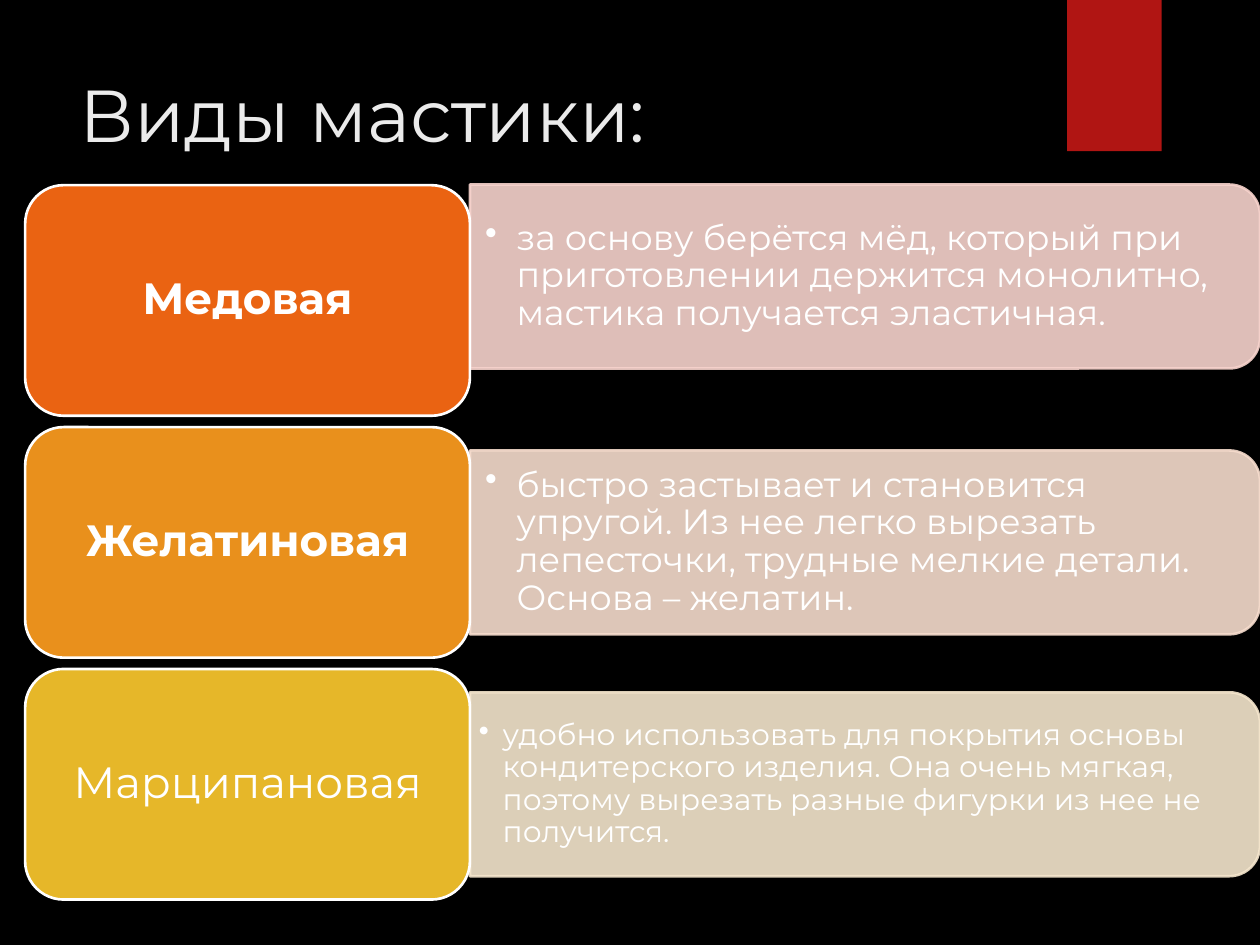
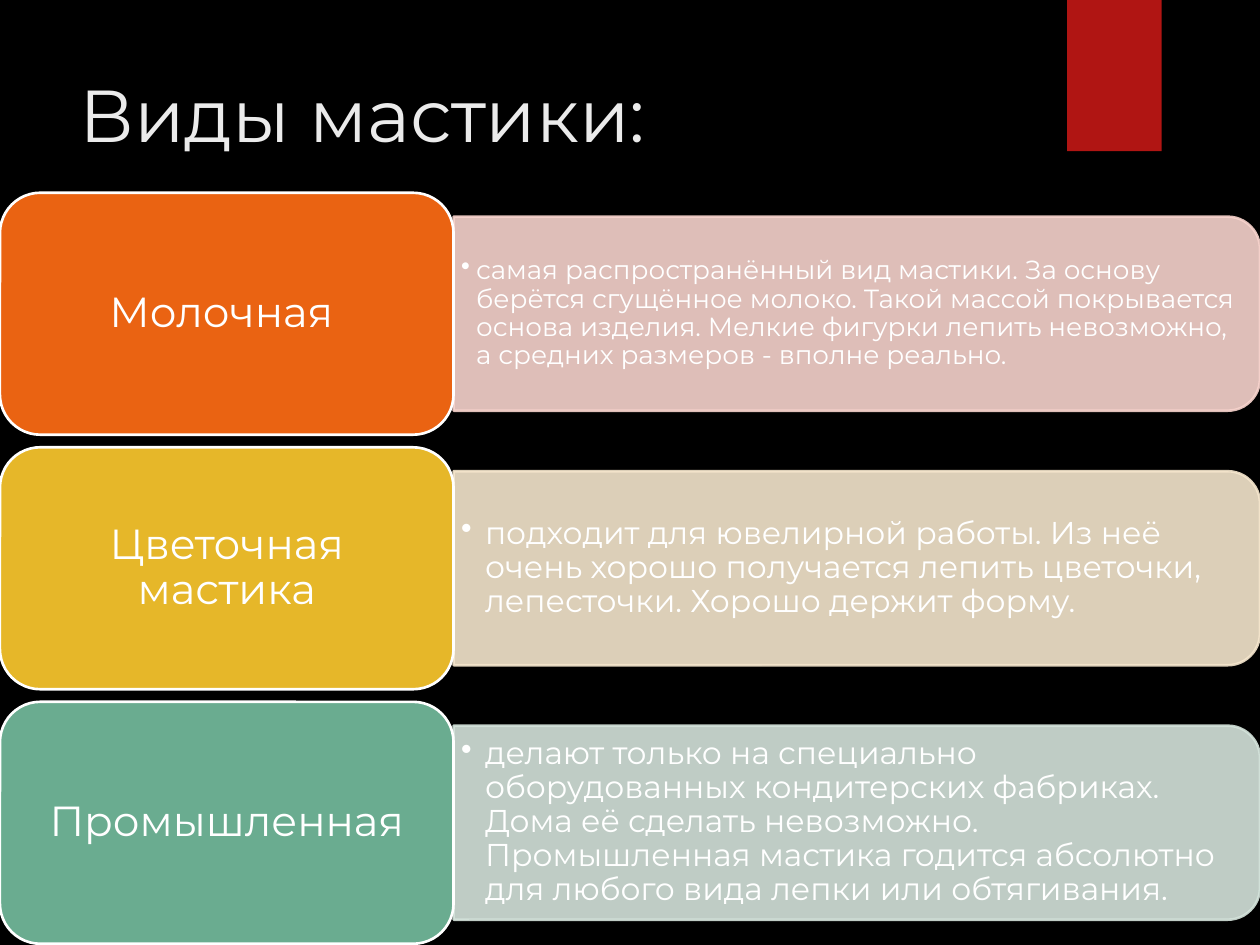
import dataclasses

import lxml.etree
import pptx
import pptx.dml.color
import pptx.dml.fill
import pptx.enum.shapes
import pptx.enum.text
import pptx.oxml.ns
import pptx.shapes.autoshape
import pptx.slide
import pptx.text.text
import pptx.util

Inches = pptx.util.Inches
Shapes = pptx.enum.shapes.MSO_SHAPE
Anchor = pptx.enum.text.MSO_ANCHOR
Align = pptx.enum.text.PP_ALIGN


@dataclasses.dataclass(frozen=True)
class Theme:
    font: str = "Montserrat"
    background: str = "000000"
    ribbon: str = "B01513"
    title: str = "EBEBEB"
    white: str = "FFFFFF"
    title_size: int = 42
    outline_width: float = 1.5
    line_spacing: float = 0.9
    panel_opacity: int = 90


@dataclasses.dataclass(frozen=True)
class Tint:
    label: str
    panel: str


@dataclasses.dataclass(frozen=True)
class Kind:
    name: str
    description: str
    tint: Tint
    size: int
    indent: float
    inset: float
    bold: bool = False
    panel_shift: float = 0


@dataclasses.dataclass(frozen=True)
class KindList:
    left: float
    top: float
    label_width: float
    label_height: float
    pitch: float
    panel_height: float
    label_size: int
    kinds: tuple[Kind, ...]


THEME = Theme()
SLIDE_WIDTH, SLIDE_HEIGHT = 10, 7.5
TITLE = "Виды мастики:"
ORANGE = Tint("EA6312", "F7D3CC")
AMBER = Tint("E9901C", "F6DCCD")
YELLOW = Tint("E6B729", "F5E6CD")
GREEN = Tint("6AAC90", "D4E3DB")

KIND_LISTS = (
    KindList(0.2, 1.47, 3.53, 1.83, 1.92, 1.46, 25, (
        Kind("Медовая",
             "за основу берётся мёд, который при приготовлении держится монолитно, "
             "мастика получается эластичная.",
             ORANGE, 20, 0.25, 0.12, bold=True, panel_shift=-0.19),
        Kind("Желатиновая",
             "быстро застывает и становится упругой. Из нее легко вырезать лепесточки, "
             "трудные мелкие детали. Основа – желатин.",
             AMBER, 20, 0.25, 0.12, bold=True),
        Kind("Марципановая",
             "удобно использовать для покрытия основы кондитерского изделия. Она очень "
             "мягкая, поэтому вырезать разные фигурки из нее не получится.",
             YELLOW, 17, 0.19, 0.07),
    )),
    KindList(0, 1.53, 3.6, 1.92, 2.02, 1.54, 24, (
        Kind("Молочная ",
             "самая распространённый вид мастики. За основу берётся сгущённое молоко. "
             "Такой массой покрывается основа изделия. Мелкие фигурки лепить невозможно, "
             "а средних размеров - вполне реально.",
             ORANGE, 15, 0.12, 0.06),
        Kind("Цветочная мастика",
             "подходит для ювелирной работы. Из неё очень хорошо получается лепить "
             "цветочки, лепесточки. Хорошо держит форму.",
             YELLOW, 18, 0.19, 0.06),
        Kind("Промышленная",
             "делают только на специально оборудованных кондитерских фабриках. Дома её "
             "сделать невозможно. Промышленная мастика годится абсолютно для любого вида "
             "лепки или обтягивания.",
             GREEN, 18, 0.19, 0.06),
    )),
)


def paint(fill: pptx.dml.fill.FillFormat, color: str, opacity: int = 100) -> None:
    fill.solid()
    fill.fore_color.rgb = pptx.dml.color.RGBColor.from_string(color)
    if opacity < 100:
        for rgb in fill._xPr.iter(pptx.oxml.ns.qn("a:srgbClr")):
            alpha = lxml.etree.SubElement(rgb, pptx.oxml.ns.qn("a:alpha"))
            alpha.set("val", str(opacity * 1000))


def add_block(slide: pptx.slide.Slide, preset: Shapes, left: float, top: float,
              width: float, height: float, color: str, outline: str | None = None,
              opacity: int = 100) -> pptx.shapes.autoshape.Shape:
    block = slide.shapes.add_shape(
        preset, Inches(left), Inches(top), Inches(width), Inches(height))
    block.shadow.inherit = False
    paint(block.fill, color, opacity)
    if outline:
        block.line.width = pptx.util.Pt(THEME.outline_width)
        paint(block.line.fill, outline, opacity)
    else:
        block.line.fill.background()
    return block


def write(frame: pptx.text.text.TextFrame, text: str, size: int, color: str,
          inset: float = 0.1, bold: bool = False) -> pptx.text.text._Paragraph:
    frame.text = text
    frame.word_wrap = True
    frame.margin_left = frame.margin_right = Inches(inset)
    frame.margin_top = frame.margin_bottom = Inches(inset / 2)
    paragraph = frame.paragraphs[0]
    for run in paragraph.runs:
        run.font.name = THEME.font
        run.font.size = pptx.util.Pt(size)
        run.font.bold = bold
        run.font.color.rgb = pptx.dml.color.RGBColor.from_string(color)
    return paragraph


def add_bullet(paragraph: pptx.text.text._Paragraph, indent: float) -> None:
    properties = paragraph._p.get_or_add_pPr()
    properties.set("marL", str(Inches(indent)))
    properties.set("indent", str(-Inches(indent)))
    bullet = lxml.etree.SubElement(properties, pptx.oxml.ns.qn("a:buChar"))
    bullet.set("char", "•")


def add_header(slide: pptx.slide.Slide) -> None:
    add_block(slide, Shapes.RECTANGLE, 8.47, 0, 0.75, 1.2, THEME.ribbon)
    title = slide.shapes.add_textbox(Inches(0.53), Inches(0.5), Inches(7.72), Inches(1.53))
    write(title.text_frame, TITLE, THEME.title_size, THEME.title)


def add_kind(slide: pptx.slide.Slide, layout: KindList, kind: Kind, top: float) -> None:
    panel_left = layout.left + layout.label_width
    panel_width = SLIDE_WIDTH - panel_left
    center_x = panel_left + panel_width / 2
    center_y = top + layout.label_height / 2 + kind.panel_shift
    panel = add_block(
        slide, Shapes.ROUND_2_SAME_RECTANGLE,
        center_x - layout.panel_height / 2, center_y - panel_width / 2,
        layout.panel_height, panel_width,
        kind.tint.panel, kind.tint.panel, THEME.panel_opacity)
    panel.rotation = 90

    text_height = layout.panel_height - 0.14
    description = slide.shapes.add_textbox(
        Inches(panel_left), Inches(center_y - text_height / 2),
        Inches(panel_width - 0.07), Inches(text_height))
    description.text_frame.vertical_anchor = Anchor.MIDDLE
    paragraph = write(
        description.text_frame, kind.description, kind.size, THEME.white, kind.inset)
    paragraph.line_spacing = THEME.line_spacing
    add_bullet(paragraph, kind.indent)

    label = add_block(
        slide, Shapes.ROUNDED_RECTANGLE, layout.left, top,
        layout.label_width, layout.label_height, kind.tint.label, THEME.white)
    label.text_frame.vertical_anchor = Anchor.MIDDLE
    paragraph = write(
        label.text_frame, kind.name, layout.label_size, THEME.white, bold=kind.bold)
    paragraph.alignment = Align.CENTER
    paragraph.line_spacing = THEME.line_spacing


def main() -> None:
    deck = pptx.Presentation()
    deck.slide_width = Inches(SLIDE_WIDTH)
    deck.slide_height = Inches(SLIDE_HEIGHT)
    paint(deck.slide_master.background.fill, THEME.background)
    for layout in KIND_LISTS:
        slide = deck.slides.add_slide(deck.slide_layouts[6])
        add_header(slide)
        for row, kind in enumerate(layout.kinds):
            add_kind(slide, layout, kind, layout.top + row * layout.pitch)
    deck.save("out.pptx")


if __name__ == "__main__":
    main()
